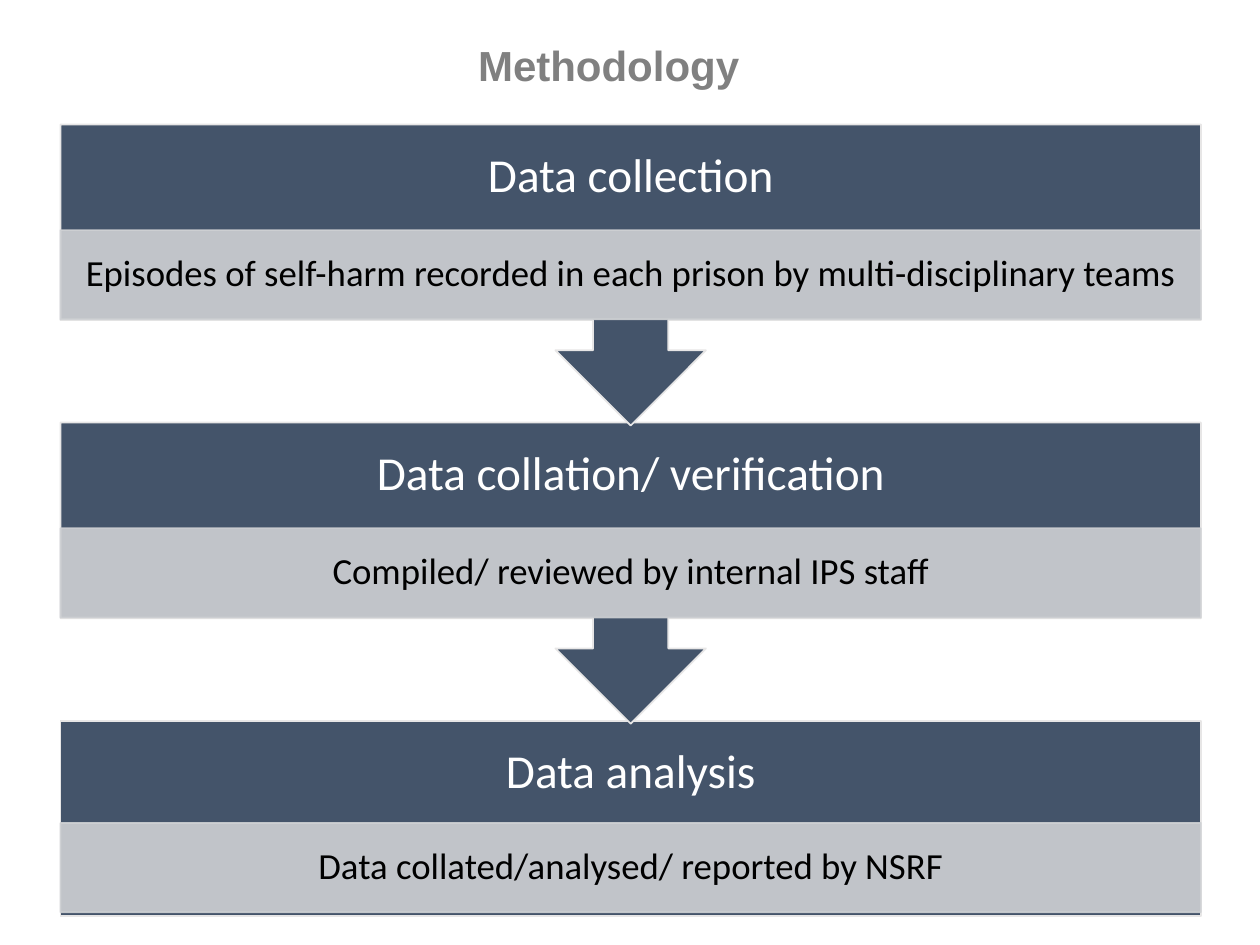
from lxml.etree import SubElement
from pptx import Presentation
from pptx.dml.color import RGBColor
from pptx.enum.shapes import MSO_SHAPE
from pptx.enum.text import MSO_ANCHOR, PP_ALIGN
from pptx.oxml.ns import qn
from pptx.util import Cm, Pt

COLOURS = {
    "navy": "44546A",
    "border": "E7E6E6",
    "band": "CFD1D4",
    "white": "FFFFFF",
    "black": "000000",
    "heading": "808080",
}
LEFT, WIDTH = 1.22, 22.99
TOP, STEP = 2.51, 6.01
TITLE_HEIGHT, BAND_HEIGHT = 2.13, 1.8

STEPS = [
    ("Data collection",
     "Episodes of self-harm recorded in each prison by multi-disciplinary teams",
     MSO_SHAPE.DOWN_ARROW_CALLOUT, 6.07, 2.13),
    ("Data collation/ verification",
     "Compiled/ reviewed by internal IPS staff",
     MSO_SHAPE.DOWN_ARROW_CALLOUT, 6.07, 2.13),
    ("Data analysis",
     "Data collated/analysed/ reported by NSRF",
     MSO_SHAPE.RECTANGLE, 3.94, 2.06),
]


def add_block(slide, kind, top, height, fill, line, alpha=None):
    shape = slide.shapes.add_shape(kind, Cm(LEFT), Cm(top), Cm(WIDTH), Cm(height))
    shape.shadow.inherit = False
    shape.fill.solid()
    shape.fill.fore_color.rgb = RGBColor.from_string(COLOURS[fill])
    shape.line.color.rgb = RGBColor.from_string(COLOURS[line])
    shape.line.width = Pt(1)
    if alpha:
        for colour in shape.element.spPr.iter(qn("a:srgbClr")):
            SubElement(colour, qn("a:alpha"), val=str(alpha * 1000))
    return shape


def write_text(shape, text, size, colour, font="Calibri", bold=False,
               side=0.25, edge=0.13, spacing=0.9, anchor=MSO_ANCHOR.MIDDLE):
    frame = shape.text_frame
    frame.word_wrap = True
    frame.vertical_anchor = anchor
    frame.margin_left = frame.margin_right = Cm(side)
    frame.margin_top = frame.margin_bottom = Cm(edge)
    paragraph = frame.paragraphs[0]
    paragraph.text = text
    paragraph.alignment = PP_ALIGN.CENTER
    paragraph.line_spacing = spacing
    paragraph.font.name = font
    paragraph.font.size = Pt(size)
    paragraph.font.bold = bold
    paragraph.font.color.rgb = RGBColor.from_string(COLOURS[colour])


presentation = Presentation()
presentation.slide_width = Cm(25.4)
presentation.slide_height = Cm(19.05)
slide = presentation.slides.add_slide(presentation.slide_layouts[6])

for index, (title, detail, kind, height, band_offset) in reversed(list(enumerate(STEPS))):
    top = TOP + index * STEP
    add_block(slide, kind, top, height, "navy", "border")
    title_box = slide.shapes.add_textbox(Cm(LEFT), Cm(top), Cm(WIDTH), Cm(TITLE_HEIGHT))
    write_text(title_box, title, 27, "white", side=0.53, edge=0.53)
    band = add_block(slide, MSO_SHAPE.RECTANGLE, top + band_offset, BAND_HEIGHT,
                     "band", "band", alpha=90)
    write_text(band, detail, 21, "black", side=0.41, edge=0.08)

heading = slide.shapes.add_textbox(Cm(5.92), Cm(0.66), Cm(12.7), Cm(1.27))
write_text(heading, "Methodology", 24, "heading", font="Arial", bold=True,
           spacing=1.0, anchor=MSO_ANCHOR.TOP)

presentation.save("out.pptx")
